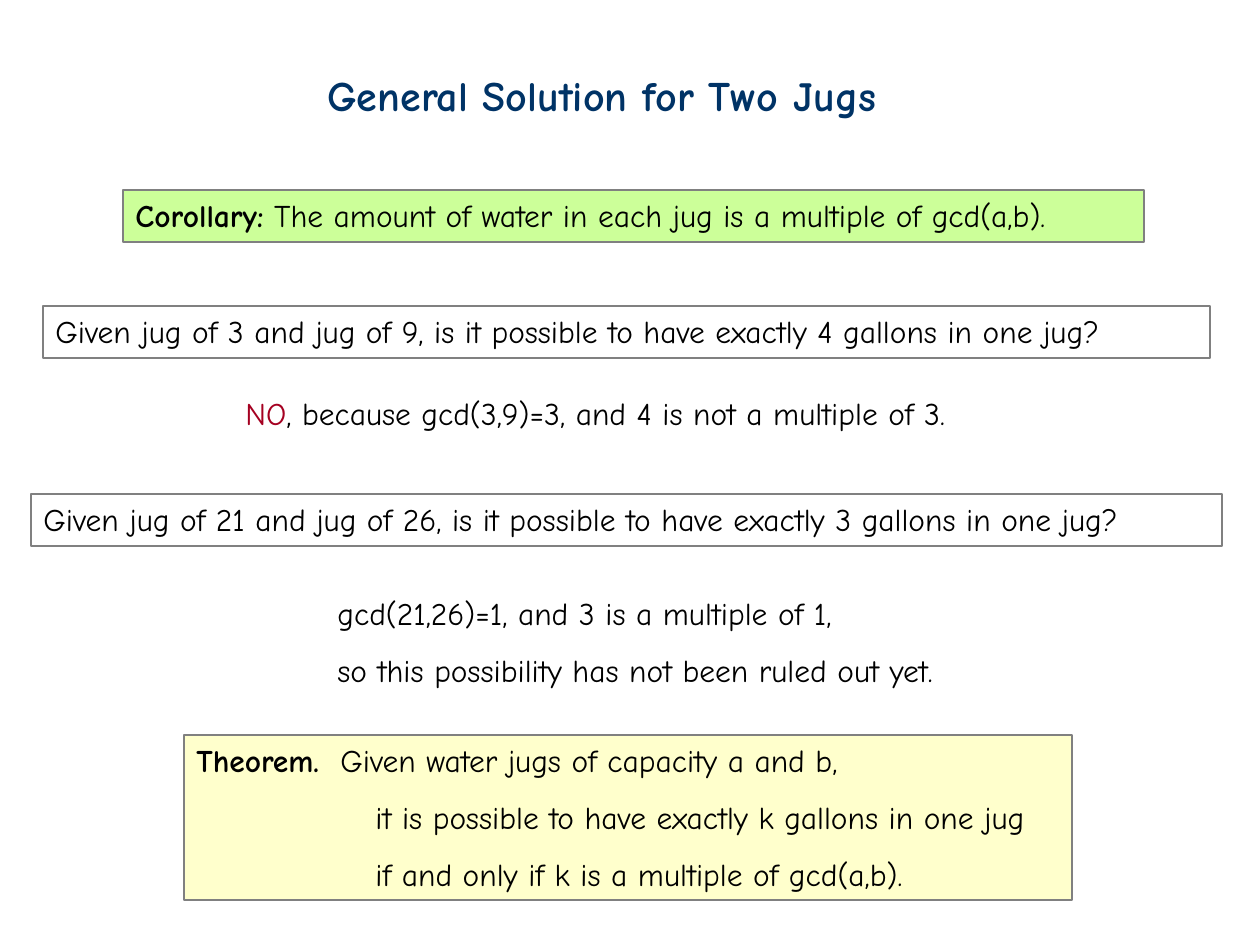
"""Build the slide on the general solution of the water jug puzzle."""
from dataclasses import dataclass
from typing import Optional

from lxml.etree import SubElement
from pptx import Presentation
from pptx.dml.color import RGBColor
from pptx.enum.shapes import MSO_SHAPE
from pptx.enum.text import MSO_ANCHOR, PP_ALIGN
from pptx.oxml.ns import qn
from pptx.util import Emu, Pt

PIXELS_PER_INCH = 126
FONT = "Comic Neue"
BLACK, NAVY, RED, GRAY = "000000", "003366", "A50021", "808080"
GREEN, YELLOW = "CCFF99", "FFFFCC"


@dataclass(frozen=True)
class Span:
    """A stretch of text in one format."""
    text: str
    color: str = BLACK
    bold: bool = False


@dataclass(frozen=True)
class Line:
    """A paragraph with its spacing, left indent and optional tab stop."""
    spans: tuple[Span, ...]
    spacing: float = 1.0
    indent: int = 0
    tab: int = 0


@dataclass(frozen=True)
class Block:
    """A text block, outlined when it is a statement or a question."""
    left: int
    top: int
    width: int
    height: int
    lines: tuple[Line, ...]
    fill: Optional[str] = None
    outlined: bool = False
    size: int = 18


def px(length: int) -> Emu:
    """Turn pixels into EMU."""
    return Emu(round(length * 914400 / PIXELS_PER_INCH))


def rgb(color: str) -> RGBColor:
    """Turn a hex string into a colour."""
    return RGBColor.from_string(color)


def plain(text: str, **layout) -> Line:
    """Make a line of a single black span."""
    return Line((Span(text),), **layout)


def write_line(paragraph, line: Line, size: int) -> None:
    """Write the spans and the layout of one paragraph."""
    paragraph.alignment = PP_ALIGN.LEFT
    if line.spacing != 1:
        paragraph.line_spacing = line.spacing
    properties = paragraph._p.get_or_add_pPr()
    if line.indent:
        properties.set("marL", str(px(line.indent)))
    if line.tab:
        tabs = SubElement(properties, qn("a:tabLst"))
        SubElement(tabs, qn("a:tab"), pos=str(px(line.tab)), algn="l")
    for span in line.spans:
        run = paragraph.add_run()
        run.text = span.text
        formats = {"name": FONT, "size": Pt(size), "bold": span.bold}
        for name, value in formats.items():
            setattr(run.font, name, value)
        run.font.color.rgb = rgb(span.color)


def draw_block(slide, block: Block) -> None:
    """Draw a text block on the slide."""
    box = [px(n) for n in (block.left, block.top, block.width, block.height)]
    if block.outlined:
        shape = slide.shapes.add_shape(MSO_SHAPE.RECTANGLE, *box)
        shape.shadow.inherit = False
        shape.line.color.rgb = rgb(GRAY)
        shape.line.width = Pt(0.75)
        if block.fill:
            shape.fill.solid()
            shape.fill.fore_color.rgb = rgb(block.fill)
        else:
            shape.fill.background()
    else:
        shape = slide.shapes.add_textbox(*box)
    frame = shape.text_frame
    for name, value in {"word_wrap": True, "vertical_anchor": MSO_ANCHOR.TOP}.items():
        setattr(frame, name, value)
    for index, line in enumerate(block.lines):
        paragraph = frame.add_paragraph() if index else frame.paragraphs[0]
        write_line(paragraph, line, block.size)


BLOCKS = (
    Block(315, 63, 641, 63, (
        Line((Span("General Solution for Two Jugs", NAVY, True),)),), size=24),
    Block(123, 190, 1021, 52, (
        Line((Span("Corollary:", bold=True),
              Span(" The amount of water in each jug is a multiple of gcd(a,b)."))),),
          GREEN, True),
    Block(43, 306, 1167, 52, (
        plain("Given jug of 3 and jug of 9, is it possible to have exactly 4 gallons in one jug?"),),
          outlined=True),
    Block(233, 388, 795, 50, (
        Line((Span("NO", RED),
              Span(", because gcd(3,9)=3, and 4 is not a multiple of 3."))),)),
    Block(31, 494, 1191, 52, (
        plain("Given jug of 21 and jug of 26, is it possible to have exactly 3 gallons in one jug?"),),
          outlined=True),
    Block(325, 588, 685, 107, (
        plain("gcd(21,26)=1, and 3 is a multiple of 1,"),
        plain("so this possibility has not been ruled out yet.", spacing=1.5))),
    Block(184, 735, 888, 165, (
        Line((Span("Theorem.", bold=True),
              Span("\tGiven water jugs of capacity a and b,")), tab=144),
        plain("it is possible to have exactly k gallons in one jug", spacing=1.5, indent=179),
        plain("if and only if k is a multiple of gcd(a,b).", spacing=1.5, indent=179)),
          YELLOW, True),
)


def main() -> None:
    """Build and save the presentation."""
    presentation = Presentation()
    presentation.slide_width, presentation.slide_height = px(1260), px(945)
    slide = presentation.slides.add_slide(presentation.slide_layouts[6])
    for block in BLOCKS:
        draw_block(slide, block)
    presentation.save("out.pptx")


if __name__ == "__main__":
    main()
